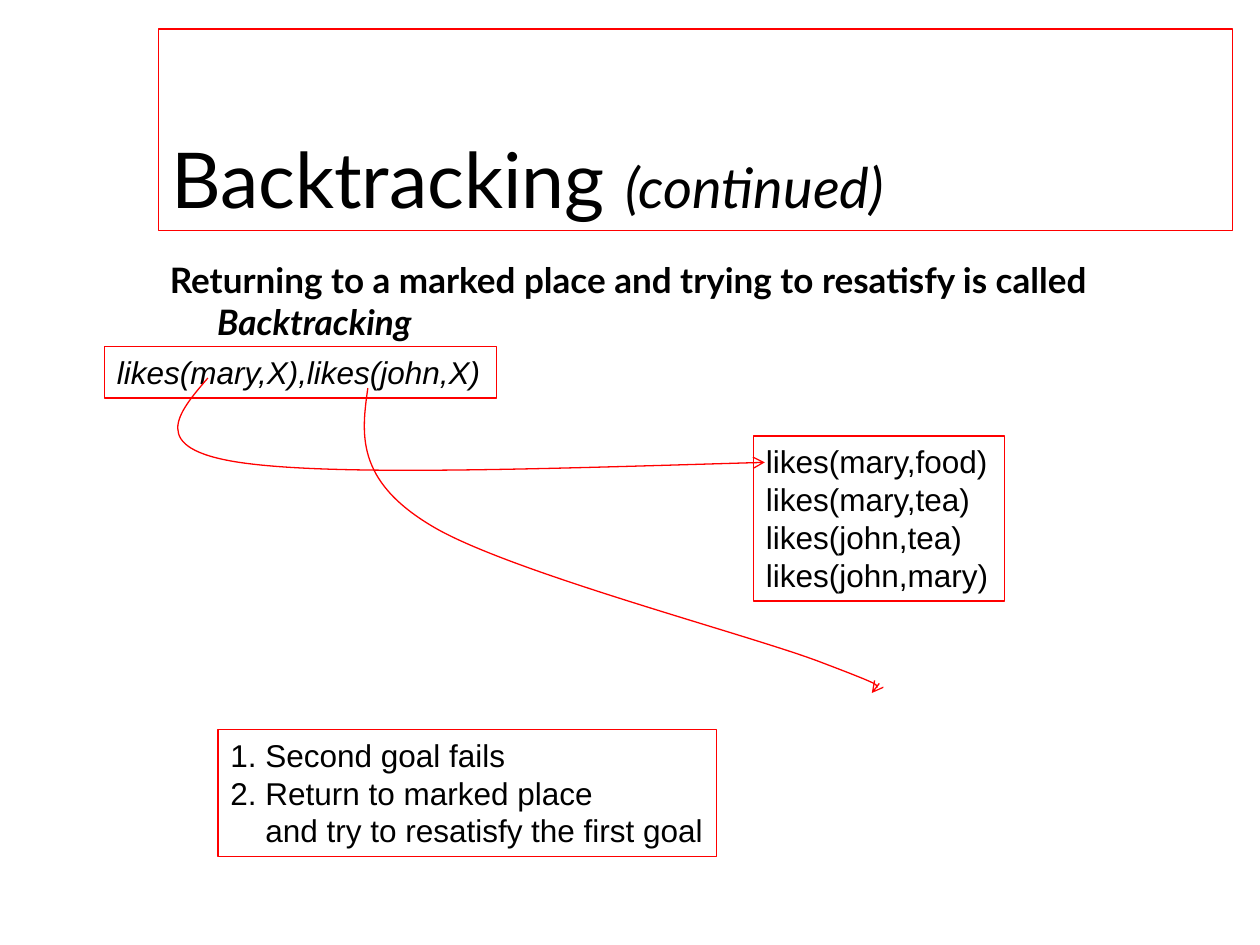
"""Build the slide on backtracking to a marked goal."""
import pptx
import pptx.dml.color
import pptx.enum.text
import pptx.oxml
import pptx.oxml.ns
import pptx.util

Pt = pptx.util.Pt
ANCHOR = pptx.enum.text.MSO_ANCHOR
FIT = pptx.enum.text.MSO_AUTO_SIZE
BLACK = pptx.dml.color.RGBColor(0, 0, 0)
RED = pptx.dml.color.RGBColor(255, 0, 0)
OUTLINE = 0.75
NUMBER_WIDTH = 20

TITLE = [("Backtracking ", 44, False, False), ("(continued)", 32, False, True)]
STATEMENT = [
    ("Returning to a marked place and trying to resatisfy is called ", 20, True, False),
    ("Backtracking", 20, True, True),
]
NOTES = [
    ((59.76, 198, 223.92, 29.52), True, [("likes(mary,X),likes(john,X)", 0)]),
    ((430.56, 249.12, 143.28, 94.32), False,
     [("likes(mary,food)", 0), ("likes(mary,tea)", 0),
      ("likes(john,tea)", 0), ("likes(john,mary)", 0)]),
    ((124.56, 416.88, 285.12, 72.72), False,
     [("1. Second goal fails", 0), ("2. Return to marked place", 0),
      ("and try to resatisfy the first goal", NUMBER_WIDTH)]),
]
CURVES = [
    [(118.8, 216), (101.5, 236.2), (84.24, 256.3), (136.8, 264.24),
     (190.1, 272.16), (313.2, 267.8), (437.04, 264.24)],
    [(210.24, 221.76), (206.6, 247.7), (203.04, 274.3), (246.24, 300.24),
     (288.7, 326.2), (426.2, 362.2), (468, 378),
     (509.76, 393.8), (504, 395.3), (498.24, 396)],
]


def add_box(page, place, outlined=True):
    box = page.shapes.add_textbox(*map(Pt, place))
    box.text_frame.word_wrap = True
    if outlined:
        box.line.color.rgb = RED
        box.line.width = Pt(OUTLINE)
    return box


def add_span(para, text, font, size, bold=False, italic=False):
    span = para.add_run()
    span.text = text
    span.font.name = font
    span.font.size = Pt(size)
    span.font.bold = bold
    span.font.italic = italic
    span.font.color.rgb = BLACK


def set_indent(para, left, first):
    properties = para._p.get_or_add_pPr()
    properties.set("marL", str(Pt(left)))
    properties.set("indent", str(Pt(first)))


def add_note(page, place, italic, lines):
    frame = add_box(page, place).text_frame
    frame.word_wrap = False
    frame.auto_size = FIT.SHAPE_TO_FIT_TEXT
    for index, (text, indent) in enumerate(lines):
        para = frame.add_paragraph() if index else frame.paragraphs[0]
        set_indent(para, indent, 0)
        add_span(para, text, "Arial", 18, italic=italic)


def add_curve(page, points):
    start, *rest = [(Pt(x), Pt(y)) for x, y in points]
    builder = page.shapes.build_freeform(*start, scale=1.0)
    builder.add_line_segments(rest, close=False)
    curve = builder.convert_to_shape()
    curve.shadow.inherit = False
    curve.fill.background()
    curve.line.color.rgb = RED
    curve.line.width = Pt(OUTLINE)
    qn = pptx.oxml.ns.qn
    outline = curve.line._get_or_add_ln()
    outline.append(outline.makeelement(qn("a:tailEnd"), {"type": "arrow"}))
    segments = list(curve._element.iter(qn("a:lnTo")))
    for first in range(0, len(segments), 3):
        track = segments[first].getparent()
        bezier = track.makeelement(qn("a:cubicBezTo"), {})
        track.append(bezier)
        for segment in segments[first:first + 3]:
            bezier.append(segment[0])
            track.remove(segment)


def main():
    deck = pptx.Presentation()
    deck.slide_width, deck.slide_height = Pt(720), Pt(540)
    page = deck.slides.add_slide(deck.slide_layouts[6])

    title = add_box(page, (90.72, 16.56, 613.44, 115.2)).text_frame
    title.vertical_anchor = ANCHOR.BOTTOM
    statement = add_box(page, (90, 144, 612, 324), outlined=False).text_frame
    set_indent(statement.paragraphs[0], 27, -27)
    for frame, spans in ((title, TITLE), (statement, STATEMENT)):
        for text, size, bold, italic in spans:
            add_span(frame.paragraphs[0], text, "Lato", size, bold, italic)

    for note in NOTES:
        add_note(page, *note)
    for points in CURVES:
        add_curve(page, points)
    deck.save("out.pptx")


if __name__ == "__main__":
    main()
